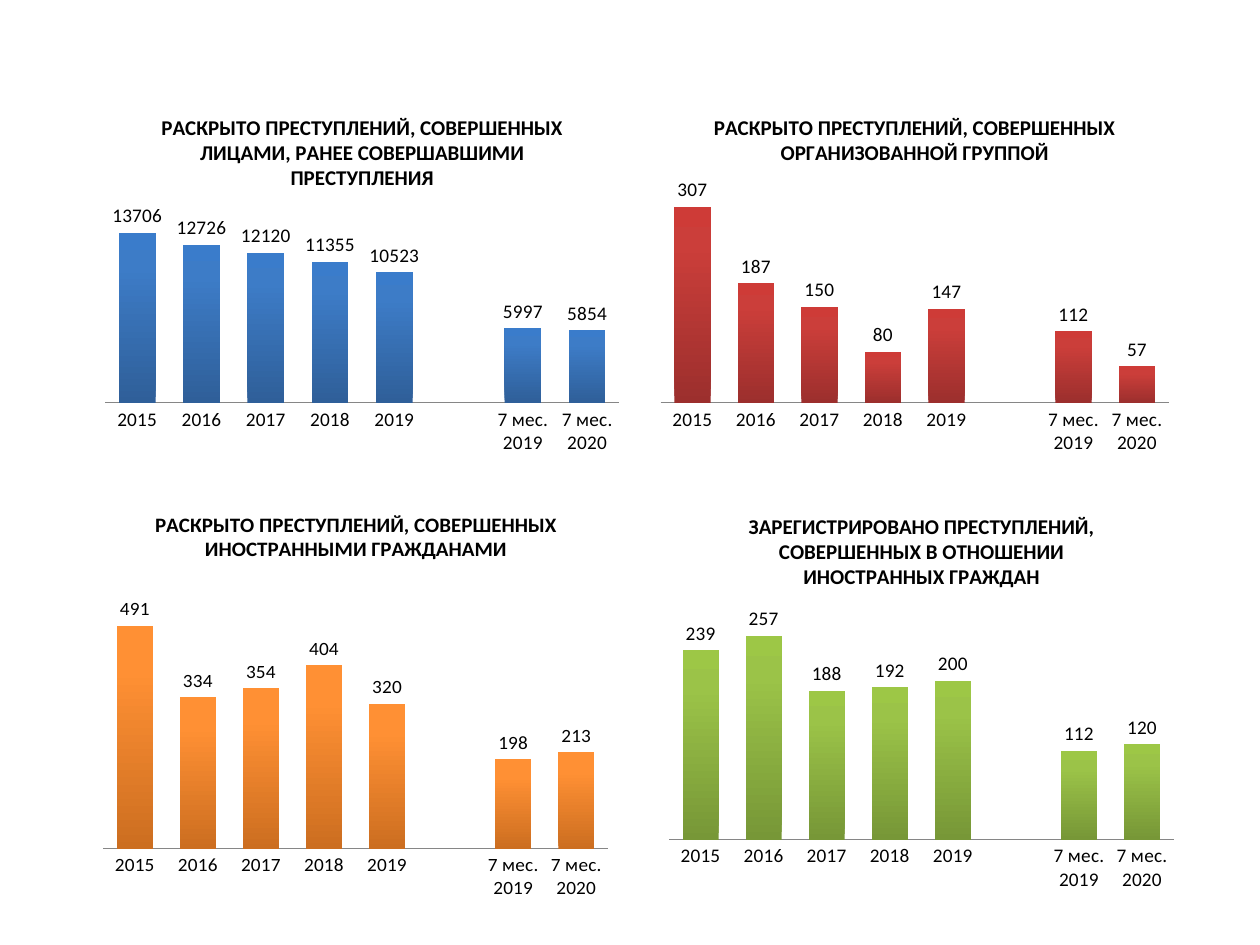
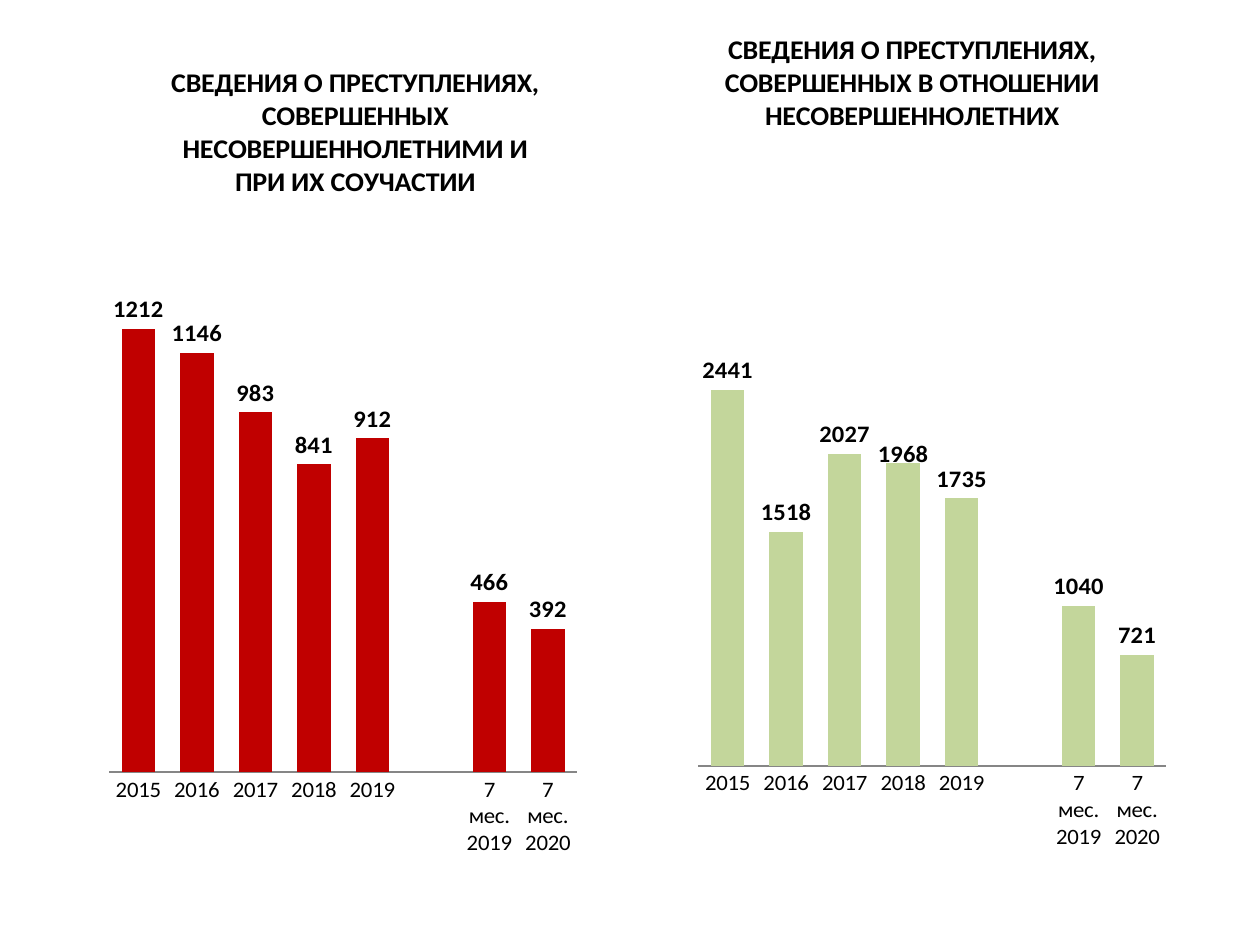
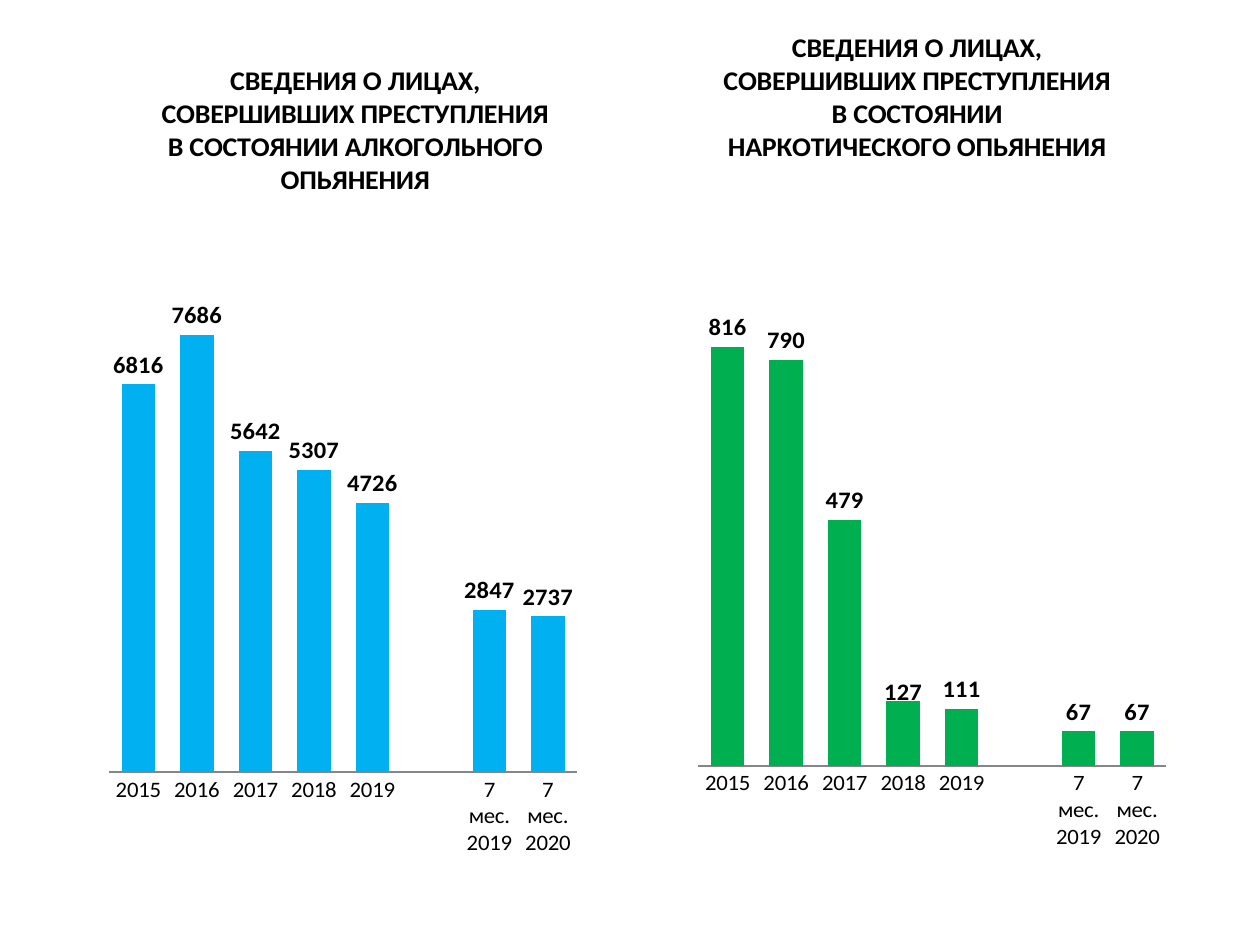
from copy import deepcopy
from dataclasses import dataclass
from typing import Optional

from pptx import Presentation
from pptx.chart.chart import Chart
from pptx.chart.data import CategoryChartData
from pptx.chart.series import BarSeries
from pptx.dml.color import RGBColor
from pptx.enum.chart import XL_CHART_TYPE, XL_LABEL_POSITION, XL_TICK_MARK
from pptx.oxml import parse_xml
from pptx.oxml.ns import nsdecls, qn
from pptx.slide import Slide
from pptx.util import Inches, Pt

COLUMNS = XL_CHART_TYPE.COLUMN_CLUSTERED
OUTSIDE_END = XL_LABEL_POSITION.OUTSIDE_END
NO_TICKS = XL_TICK_MARK.NONE

FONT = "Calibri"
BLACK = RGBColor(0x00, 0x00, 0x00)
AXIS_GRAY = RGBColor(0x86, 0x86, 0x86)
DARK_RED = RGBColor(0xC0, 0x00, 0x00)
PALE_GREEN = RGBColor(0xC3, 0xD6, 0x9B)
SKY = RGBColor(0x00, 0xB0, 0xF0)
GREEN = RGBColor(0x00, 0xB0, 0x50)
BLUE_SHADES = (RGBColor(0x2F, 0x5F, 0x99), RGBColor(0x3D, 0x7C, 0xC7), RGBColor(0x3A, 0x7C, 0xCB))
RED_SHADES = (RGBColor(0x9C, 0x2F, 0x2D), RGBColor(0xCB, 0x3E, 0x3A), RGBColor(0xCE, 0x3B, 0x37))
ORANGE_SHADES = (RGBColor(0xCC, 0x6E, 0x20), RGBColor(0xFF, 0x90, 0x34), RGBColor(0xFF, 0x91, 0x36))
LIME_SHADES = (RGBColor(0x77, 0x97, 0x37), RGBColor(0x9B, 0xC3, 0x48), RGBColor(0x9D, 0xC7, 0x46))
SHADE_POSITIONS = (0, 0.8, 1)

YEARS = ("2015", "2016", "2017", "2018", "2019", "", "7 мес. 2019", "7 мес. 2020")


@dataclass(frozen=True)
class TextStyle:
    title: int
    axis: int
    label: int
    bold_labels: bool


@dataclass(frozen=True)
class Frame:
    left: float
    top: float
    width: float
    height: float
    plot: Optional[tuple[float, ...]] = None
    title: Optional[tuple[float, float]] = None
    lowered_point: Optional[int] = None


@dataclass(frozen=True)
class CrimeChart:
    title: str
    values: tuple[Optional[int], ...]
    shades: tuple[RGBColor, ...]
    frame: Frame
    style: TextStyle


SMALL = TextStyle(12, 11, 11, False)
LARGE = TextStyle(16, 13, 14, True)

TOP_LEFT = Frame(0.75, 0.76, 4.25, 2.91)
TOP_RIGHT = Frame(5.16, 0.76, 4.2, 2.91)
BOTTOM_LEFT = Frame(0.67, 3.91, 4.31, 3.23, (0.035, 0.212, 0.929, 0.689))
BOTTOM_RIGHT = Frame(5.16, 3.91, 4.31, 3.54, (0.035, 0.245, 0.929, 0.533))
LEFT = Frame(0.81, 0.29, 4.02, 6.51, (0.014, 0.282, 0.924, 0.646))
RIGHT = Frame(5.39, 0.21, 4.02, 6.54, (0.038, 0.349, 0.924, 0.582), (0.08, 0), 3)

SLIDES = (
    (
        CrimeChart("РАСКРЫТО ПРЕСТУПЛЕНИЙ, СОВЕРШЕННЫХ ЛИЦАМИ, РАНЕЕ СОВЕРШАВШИМИ ПРЕСТУПЛЕНИЯ",
                   (13706, 12726, 12120, 11355, 10523, None, 5997, 5854), BLUE_SHADES, TOP_LEFT, SMALL),
        CrimeChart("РАСКРЫТО ПРЕСТУПЛЕНИЙ, СОВЕРШЕННЫХ ОРГАНИЗОВАННОЙ ГРУППОЙ",
                   (307, 187, 150, 80, 147, None, 112, 57), RED_SHADES, TOP_RIGHT, SMALL),
        CrimeChart("РАСКРЫТО ПРЕСТУПЛЕНИЙ, СОВЕРШЕННЫХ ИНОСТРАННЫМИ ГРАЖДАНАМИ",
                   (491, 334, 354, 404, 320, None, 198, 213), ORANGE_SHADES, BOTTOM_LEFT, SMALL),
        CrimeChart("ЗАРЕГИСТРИРОВАНО ПРЕСТУПЛЕНИЙ, СОВЕРШЕННЫХ В ОТНОШЕНИИ ИНОСТРАННЫХ ГРАЖДАН",
                   (239, 257, 188, 192, 200, None, 112, 120), LIME_SHADES, BOTTOM_RIGHT, SMALL),
    ),
    (
        CrimeChart("СВЕДЕНИЯ О ПРЕСТУПЛЕНИЯХ, СОВЕРШЕННЫХ НЕСОВЕРШЕННОЛЕТНИМИ И ПРИ ИХ СОУЧАСТИИ",
                   (1212, 1146, 983, 841, 912, None, 466, 392), (DARK_RED,), LEFT, LARGE),
        CrimeChart("СВЕДЕНИЯ О ПРЕСТУПЛЕНИЯХ, СОВЕРШЕННЫХ В ОТНОШЕНИИ НЕСОВЕРШЕННОЛЕТНИХ",
                   (2441, 1518, 2027, 1968, 1735, None, 1040, 721), (PALE_GREEN,), RIGHT, LARGE),
    ),
    (
        CrimeChart("СВЕДЕНИЯ О ЛИЦАХ, СОВЕРШИВШИХ ПРЕСТУПЛЕНИЯ\nВ СОСТОЯНИИ АЛКОГОЛЬНОГО ОПЬЯНЕНИЯ",
                   (6816, 7686, 5642, 5307, 4726, None, 2847, 2737), (SKY,), LEFT, LARGE),
        CrimeChart("СВЕДЕНИЯ О ЛИЦАХ, СОВЕРШИВШИХ ПРЕСТУПЛЕНИЯ\nВ СОСТОЯНИИ НАРКОТИЧЕСКОГО ОПЬЯНЕНИЯ",
                   (816, 790, 479, 127, 111, None, 67, 67), (GREEN,), RIGHT, LARGE),
    ),
)


def set_layout(parent, index: int, fractions: tuple[float, ...], tags: tuple[str, ...]) -> None:
    for layout in parent.findall(qn("c:layout")):
        parent.remove(layout)
    settings = "".join(f'<c:{tag} val="{value}"/>' for tag, value in zip(tags, fractions))
    parent.insert(index, parse_xml(
        f'<c:layout {nsdecls("c")}><c:manualLayout>{settings}</c:manualLayout></c:layout>'))


def style_font(font, size: int, bold: bool = False) -> None:
    font.name = FONT
    font.size = Pt(size)
    font.bold = bold
    font.color.rgb = BLACK


def fill_columns(series: BarSeries, shades: tuple[RGBColor, ...]) -> None:
    fill = series.format.fill
    if len(shades) == 1:
        fill.solid()
        fill.fore_color.rgb = shades[0]
        return
    fill.gradient()
    fill.gradient_angle = 90
    stop_list = next(series._element.iter(qn("a:gsLst")))
    stop_list.append(deepcopy(stop_list[0]))
    for stop, shade, position in zip(fill.gradient_stops, shades, SHADE_POSITIONS):
        stop.color.rgb = shade
        stop.position = position


def add_title(chart: Chart, crime_chart: CrimeChart) -> None:
    chart.has_title = True
    title = chart.chart_title
    title.text_frame.text = crime_chart.title
    for paragraph in title.text_frame.paragraphs:
        style_font(paragraph.font, crime_chart.style.title, True)
    title.include_in_layout = False
    if crime_chart.frame.title:
        set_layout(title._element, 1, ("edge", "edge") + crime_chart.frame.title,
                   ("xMode", "yMode", "x", "y"))


def add_labels(chart: Chart, crime_chart: CrimeChart) -> None:
    style = crime_chart.style
    plot = chart.plots[0]
    series = plot.series[0]
    labels = series.data_labels
    labels.show_value = True
    labels.position = OUTSIDE_END
    style_font(labels.font, style.label, style.bold_labels)
    lowered_point = crime_chart.frame.lowered_point
    if lowered_point is not None:
        label = series.points[lowered_point].data_label
        style_font(label.font, style.label, style.bold_labels)
        label.position = OUTSIDE_END
        set_layout(next(series._element.iter(qn("c:dLbl"))), 1, (0, 0.014), ("x", "y"))


def add_crime_chart(slide: Slide, crime_chart: CrimeChart) -> None:
    frame = crime_chart.frame
    chart_data = CategoryChartData()
    chart_data.categories = YEARS
    chart_data.add_series("Series 1", crime_chart.values)
    chart = slide.shapes.add_chart(
        COLUMNS, Inches(frame.left), Inches(frame.top),
        Inches(frame.width), Inches(frame.height), chart_data).chart
    style_font(chart.font, 18)
    chart.has_legend = False
    add_title(chart, crime_chart)

    chart.value_axis.visible = False
    chart.value_axis.has_major_gridlines = False
    category_axis = chart.category_axis
    category_axis.major_tick_mark = NO_TICKS
    category_axis.minor_tick_mark = NO_TICKS
    category_axis.format.line.color.rgb = AXIS_GRAY
    category_axis.format.line.width = Pt(0.75)
    style_font(category_axis.tick_labels.font, crime_chart.style.axis)

    plot = chart.plots[0]
    plot.gap_width = 75
    plot.vary_by_categories = False
    fill_columns(plot.series[0], crime_chart.shades)
    add_labels(chart, crime_chart)
    if frame.plot:
        plot_area = next(chart._chartSpace.iter(qn("c:plotArea")))
        set_layout(plot_area, 0, ("inner", "edge", "edge") + frame.plot,
                   ("layoutTarget", "xMode", "yMode", "x", "y", "w", "h"))


def main() -> None:
    presentation = Presentation()
    presentation.slide_width = Inches(10)
    presentation.slide_height = Inches(7.5)
    for crime_charts in SLIDES:
        slide = presentation.slides.add_slide(presentation.slide_layouts[6])
        for crime_chart in crime_charts:
            add_crime_chart(slide, crime_chart)
    presentation.save("out.pptx")


if __name__ == "__main__":
    main()
